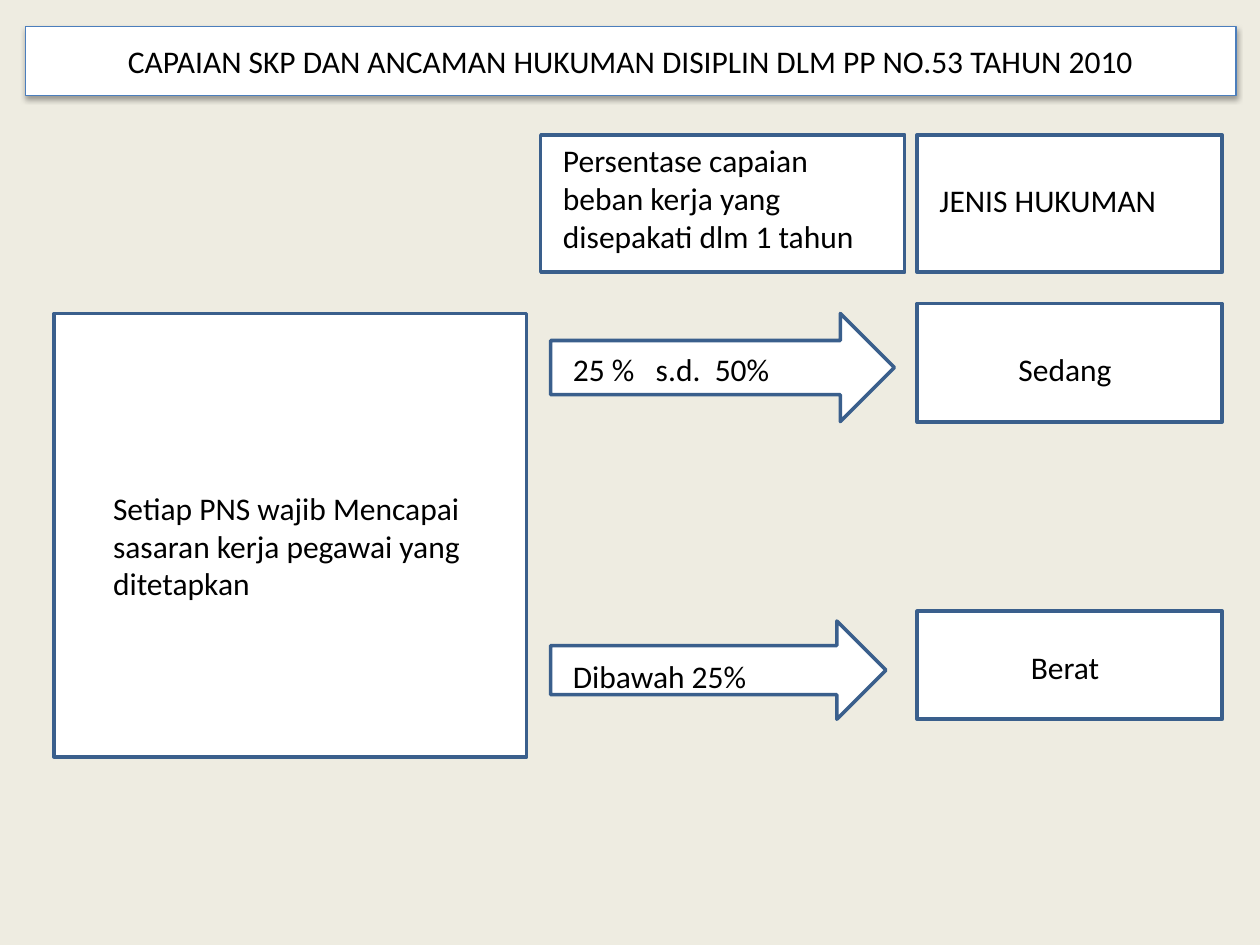
"""Build a slide that links work target results to levels of penalty."""
from lxml.etree import SubElement
from pptx import Presentation
from pptx.dml.color import RGBColor
from pptx.enum.shapes import MSO_SHAPE as Kind
from pptx.enum.text import MSO_ANCHOR as Anchor, MSO_AUTO_SIZE as Fit, PP_ALIGN as Align
from pptx.oxml.ns import qn
from pptx.util import Cm, Pt


def tint(part, code):
    if hasattr(part, "solid"):
        part.solid()
        part.fore_color.rgb = RGBColor.from_string(code)
    else:
        part.rgb = RGBColor.from_string(code)


def write(frame, text, side):
    para = frame.paragraphs[0]
    para.alignment = side
    run = para.add_run()
    run.text = text
    for name, val in {"name": "Calibri", "size": Pt(18)}.items():
        setattr(run.font, name, val)
    tint(run.font.color, "000000")
    return para


deck = Presentation()
deck.slide_width, deck.slide_height = Cm(25.4), Cm(19.05)
slide = deck.slides.add_slide(deck.slide_layouts[6])
tint(slide.background.fill, "EEECE1")

rect, arrow = Kind.RECTANGLE, Kind.RIGHT_ARROW
left, mid = Align.LEFT, Align.CENTER
goal = "Setiap PNS wajib Mencapai sasaran kerja pegawai yang ditetapkan"
share = "Persentase capaian beban kerja yang disepakati dlm 1 tahun"
span = "25 %\ts.d.\t50%"
title = "CAPAIAN SKP DAN ANCAMAN HUKUMAN DISIPLIN DLM PP NO.53 TAHUN 2010"

cells = [
    (rect, (1.09, 6.32, 9.53, 8.94), goal, (1.3, 9.73, 9.12, 2.57), left),
    (rect, (10.9, 2.72, 7.34, 2.77), share, (11.1, 2.72, 6.93, 2.57), left),
    (rect, (18.49, 2.72, 6.15, 2.77), "JENIS HUKUMAN", (18.69, 3.53, 5.77, 1.02), left),
    (arrow, (11.1, 6.32, 6.93, 2.18), span, (11.3, 6.93, 5.94, 1.02), left),
    (rect, (18.49, 6.12, 6.15, 2.39), "Sedang", (18.69, 6.93, 5.56, 1.02), mid),
    (rect, (18.49, 12.32, 6.15, 2.18), "Berat", (18.69, 12.93, 5.56, 1.02), mid),
    (arrow, (11.1, 12.52, 6.76, 1.98), "Dibawah 25%", (11.3, 13.13, 5.94, 1.02), left),
    (rect, (0.51, 0.53, 24.41, 1.4), title, None, mid),
]

for kind, area, text, spot, side in cells:
    box = slide.shapes.add_shape(kind, *map(Cm, area))
    box.shadow.inherit = False
    tint(box.fill, "FFFFFF")
    tint(box.line.fill, "3A5F8C" if spot else "4B7EBC")
    box.line.width = Pt(2 if spot else 0.75)
    if spot:
        frame = slide.shapes.add_textbox(*map(Cm, spot)).text_frame
        look = {"word_wrap": True, "auto_size": Fit.SHAPE_TO_FIT_TEXT}
        if text == goal:
            look["margin_left"] = Cm(0.98)
    else:
        frame = box.text_frame
        look = {"word_wrap": True, "vertical_anchor": Anchor.MIDDLE}
    for name, val in look.items():
        setattr(frame, name, val)
    para = write(frame, text, side)
    if text == span:
        stops = SubElement(para._p.get_or_add_pPr(), qn("a:tabLst"))
        for stop in (1.67, 2.86):
            SubElement(stops, qn("a:tab"), pos=str(Cm(stop)), algn="l")

glow = SubElement(box._element.spPr.find(qn("a:effectLst")), qn("a:outerShdw"),
                  blurRad=str(Pt(3.1)), dist=str(Pt(1.8)), dir="5400000", rotWithShape="0")
shade = SubElement(glow, qn("a:srgbClr"), val="000000")
SubElement(shade, qn("a:alpha"), val="35000")

deck.save("out.pptx")
